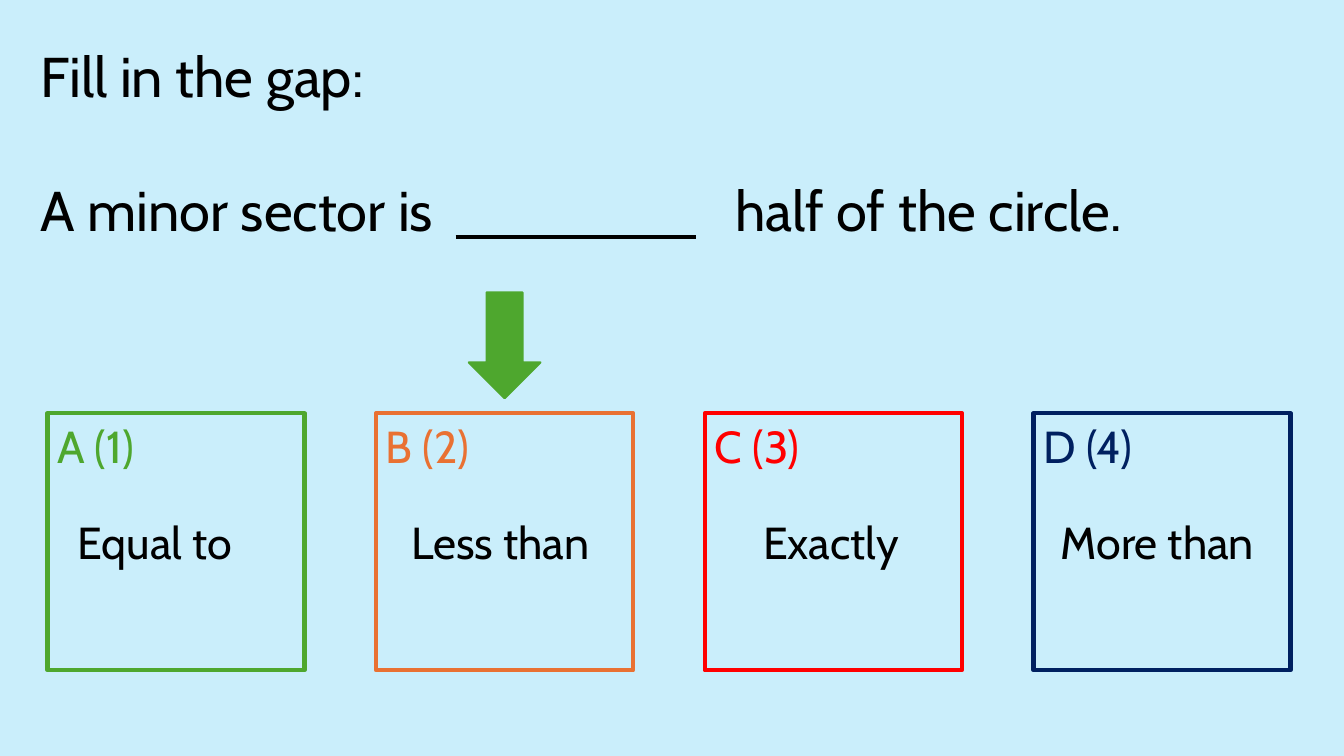
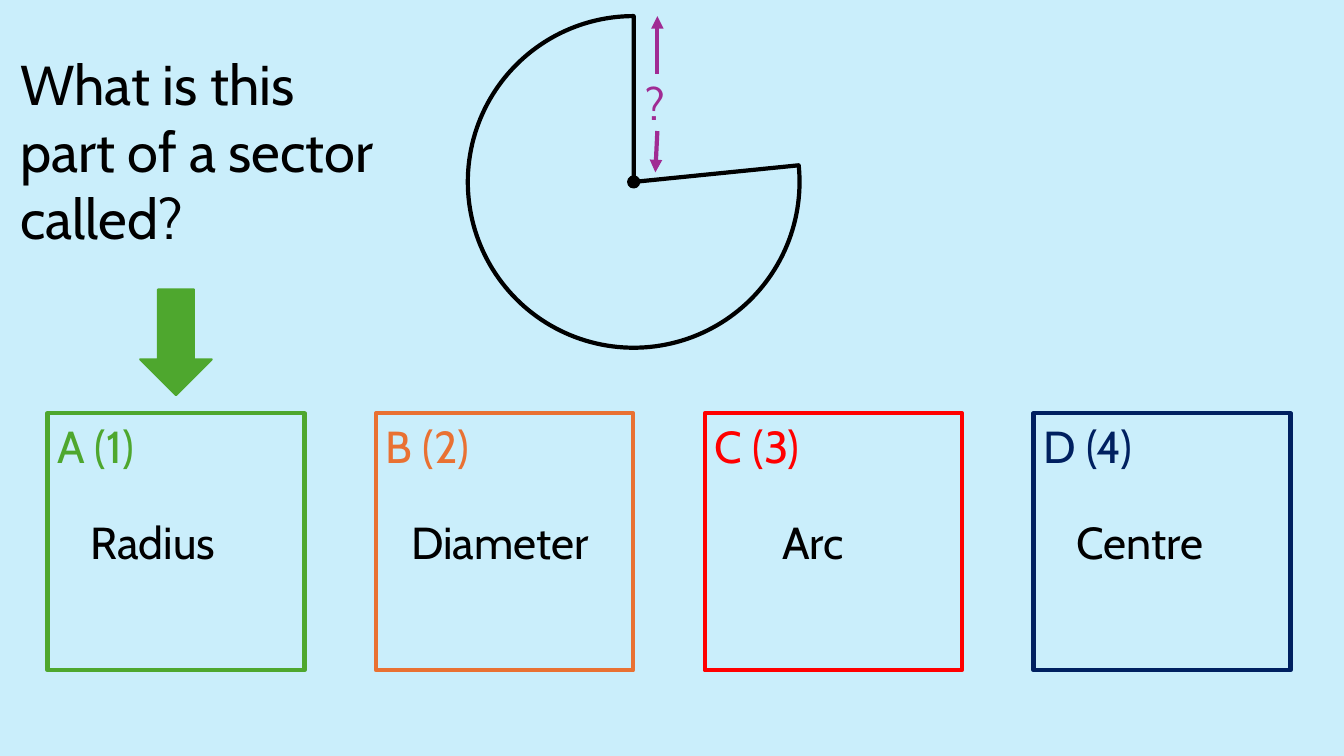
from lxml import etree
from pptx import Presentation
from pptx.dml.color import RGBColor
from pptx.enum import shapes, text
from pptx.oxml import ns
from pptx.util import Inches, Pt

FONT = "Cabin"
SKY = RGBColor(0xCA, 0xEE, 0xFB)
BLACK = RGBColor(0, 0, 0)
GREEN = RGBColor(0x4E, 0xA7, 0x2E)
ORANGE = RGBColor(0xE9, 0x71, 0x32)
RED = RGBColor(0xFF, 0, 0)
NAVY = RGBColor(0, 0x20, 0x60)
PURPLE = RGBColor(0xA0, 0x2B, 0x93)

OPTIONS = [("A (1)", GREEN), ("B (2)", ORANGE), ("C (3)", RED), ("D (4)", NAVY)]

# Each answer comes with its indent from the left edge of its box.
GAP_QUIZ = {
    "question": ["Fill in the gap:", "A minor sector is\thalf of the circle."],
    "title_at": (0.3, 0.36, 11.05, 2.12),
    "answers": [("Equal to", 0.2), ("Less than", 0.25),
                ("Exactly", 0.48), ("More than", 0.17)],
    "correct": 1,
    "arrow_top": 2.9,
}
SECTOR_QUIZ = {
    "question": ["What is this part of a sector called?"],
    "title_at": (0.1, 0.44, 3.88, 2.12),
    "answers": [("Radius", 0.33), ("Diameter", 0.25),
                ("Arc", 0.67), ("Centre", 0.33)],
    "correct": 0,
    "arrow_top": 2.87,
}

BOX_LEFT, BOX_TOP, BOX_SIZE, BOX_STEP = 0.47, 4.1, 2.55, 3.26
ANSWER_TOP = 5.06
ARROW_W, ARROW_H = 0.71, 1.05
TAB_STOP = 6.89


def inches(*lengths):
    return [Inches(n) for n in lengths]


def add_run(p, words, size, color):
    r = p.add_run()
    r.text = words
    r.font.name, r.font.size = FONT, Pt(size)
    r.font.color.rgb = color


def add_label(s, words, left, top, color=BLACK):
    tf = s.shapes.add_textbox(*inches(left, top, 2.3, 0.64)).text_frame
    tf.word_wrap = True
    add_run(tf.paragraphs[0], words, 32, color)


def add_figure(s, kind, at, color, width, filled=False):
    sp = s.shapes.add_shape(kind, *inches(*at))
    sp.shadow.inherit = False
    if filled:
        sp.fill.solid()
        sp.fill.fore_color.rgb = color
    else:
        sp.fill.background()
    sp.line.color.rgb, sp.line.width = color, Pt(width)
    return sp


def add_line(s, start, end, color, arrow=False):
    line = s.shapes.add_connector(shapes.MSO_CONNECTOR.STRAIGHT,
                                  *inches(*start, *end))
    line.line.color.rgb, line.line.width = color, Pt(3)
    if arrow:
        etree.SubElement(line.line._get_or_add_ln(), ns.qn("a:tailEnd"),
                         type="triangle")
    etree.SubElement(line._element.spPr, ns.qn("a:effectLst"))


def add_question(s, lines, at):
    title = s.shapes.title
    title.left, title.top, title.width, title.height = inches(*at)
    tf = title.text_frame
    tf.word_wrap = True
    tf.auto_size = text.MSO_AUTO_SIZE.NONE
    tf.vertical_anchor = text.MSO_ANCHOR.TOP
    for i, words in enumerate(lines):
        p = tf.add_paragraph() if i else tf.paragraphs[0]
        p.alignment = text.PP_ALIGN.LEFT
        p.space_before = Pt(48 if i else 0)
        if "\t" in words:
            tabs = etree.SubElement(p._p.get_or_add_pPr(), ns.qn("a:tabLst"))
            etree.SubElement(tabs, ns.qn("a:tab"), pos=str(Inches(TAB_STOP)),
                             algn="l")
        add_run(p, words, 40, BLACK)


def add_quiz(prs, quiz):
    s = prs.slides.add_slide(prs.slide_layouts[5])
    add_question(s, quiz["question"], quiz["title_at"])
    for i, ((label, color), (answer, indent)) in enumerate(
            zip(OPTIONS, quiz["answers"])):
        left = BOX_LEFT + i * BOX_STEP
        add_figure(s, shapes.MSO_SHAPE.RECTANGLE,
                   (left, BOX_TOP, BOX_SIZE, BOX_SIZE), color, 3)
        add_label(s, label, left, BOX_TOP, color)
        add_label(s, answer, left + indent, ANSWER_TOP)
        if i == quiz["correct"]:
            arrow_left = left + (BOX_SIZE - ARROW_W) / 2
            add_figure(s, shapes.MSO_SHAPE.DOWN_ARROW,
                       (arrow_left, quiz["arrow_top"], ARROW_W, ARROW_H),
                       GREEN, 1.5, filled=True)
    return s


def add_sector(s):
    left, top, size, dot = 4.64, 0.16, 3.29, 0.11
    pie = add_figure(s, shapes.MSO_SHAPE.PIE, (left, top, size, size), BLACK, 3)
    for i, degrees in enumerate((354.25, 270)):
        pie.adjustments[i] = degrees * 0.6  # 60000ths of a degree / 100000
    offset = (size - dot) / 2
    add_figure(s, shapes.MSO_SHAPE.OVAL, (left + offset, top + offset, dot, dot),
               BLACK, 1.5, filled=True)
    add_line(s, (6.52, 0.73), (6.52, top), PURPLE, arrow=True)
    add_line(s, (6.52, 1.3), (6.5, 1.71), PURPLE, arrow=True)
    add_label(s, "?", 6.3, 0.7, PURPLE)


def main():
    prs = Presentation()
    prs.slide_width, prs.slide_height = inches(13.33, 7.5)
    fill = prs.slide_master.background.fill
    fill.solid()
    fill.fore_color.rgb = SKY
    add_line(add_quiz(prs, GAP_QUIZ), (4.52, 2.35), (6.9, 2.35), BLACK)
    add_sector(add_quiz(prs, SECTOR_QUIZ))
    prs.save("out.pptx")


if __name__ == "__main__":
    main()
